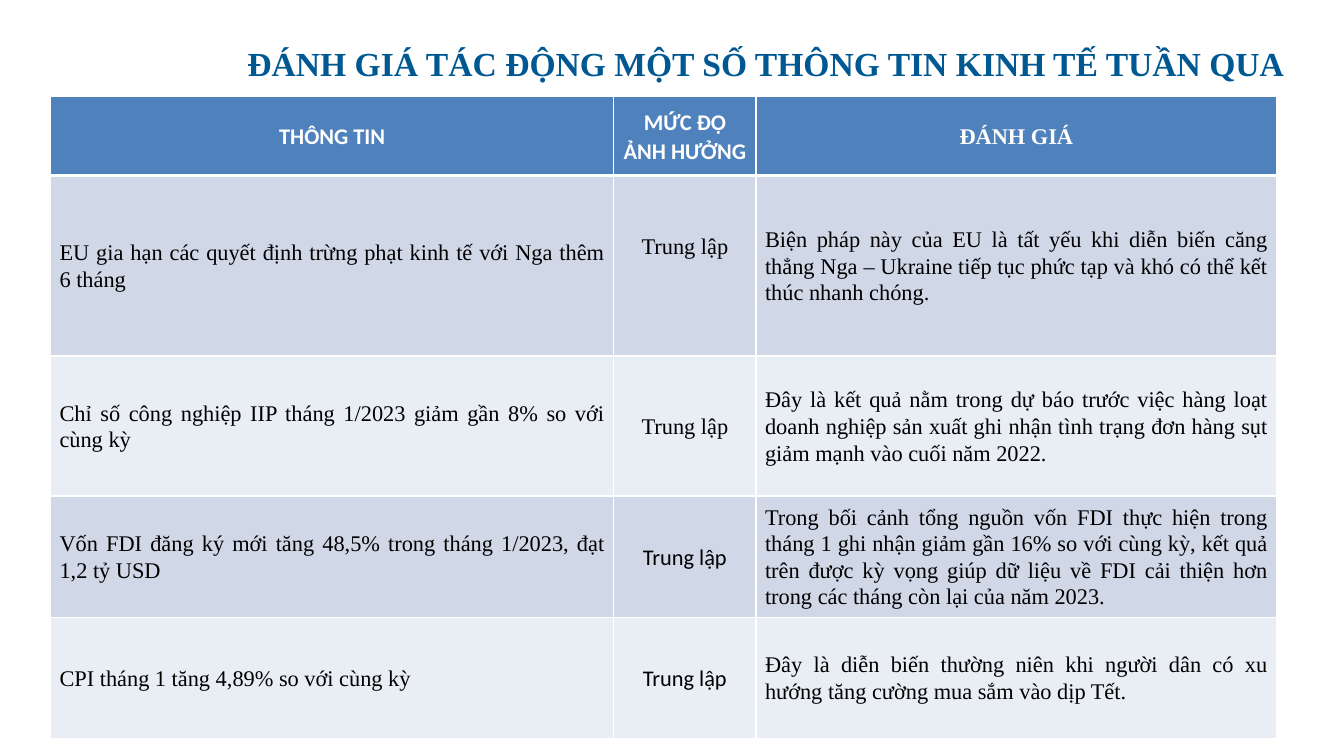
from dataclasses import dataclass

from lxml.etree import SubElement
from pptx import Presentation
from pptx.dml.color import RGBColor
from pptx.enum.text import MSO_ANCHOR, PP_ALIGN
from pptx.oxml.ns import qn
from pptx.util import Cm, Pt


@dataclass(frozen=True)
class Theme:
    serif: str = "Times New Roman"
    sans: str = "Calibri"
    title: str = "005892"
    header: str = "4F81BD"
    bands: tuple[str, str] = ("D0D8E8", "E9EDF4")
    white: str = "FFFFFF"
    black: str = "000000"
    title_size: int = 24
    table_size: int = 16
    thin: int = 1
    thick: int = 3


@dataclass(frozen=True)
class NewsRow:
    height: float
    news: str
    impact: str
    review: str
    impact_font: str
    impact_bottom: float = 0.1


THEME = Theme()
COLUMN_WIDTHS = (14.2, 3.58, 13.13)
HEADER_HEIGHT = 1.98
HEADINGS = (
    ("THÔNG TIN", THEME.sans),
    ("MỨC ĐỘ ẢNH HƯỞNG", THEME.sans),
    ("ĐÁNH GIÁ", THEME.serif),
)
NEWS_ROWS = (
    NewsRow(
        4.55,
        "EU gia hạn các quyết định trừng phạt kinh tế với Nga thêm 6 tháng",
        "Trung lập",
        "Biện pháp này của EU là tất yếu khi diễn biến căng thẳng Nga – Ukraine "
        "tiếp tục phức tạp và khó có thể kết thúc nhanh chóng.",
        THEME.serif,
        impact_bottom=1.07,
    ),
    NewsRow(
        3.53,
        "Chỉ số công nghiệp IIP tháng 1/2023 giảm gần 8% so với cùng kỳ",
        "Trung lập",
        "Đây là kết quả nằm trong dự báo trước việc hàng loạt doanh nghiệp sản xuất "
        "ghi nhận tình trạng đơn hàng sụt giảm mạnh vào cuối năm 2022.",
        THEME.serif,
    ),
    NewsRow(
        3.05,
        "Vốn FDI đăng ký mới tăng 48,5% trong tháng 1/2023, đạt 1,2 tỷ USD",
        "Trung lập",
        "Trong bối cảnh tổng nguồn vốn FDI thực hiện trong tháng 1 ghi nhận giảm gần 16% "
        "so với cùng kỳ, kết quả trên được kỳ vọng giúp dữ liệu về FDI cải thiện hơn "
        "trong các tháng còn lại của năm 2023.",
        THEME.sans,
    ),
    NewsRow(
        3.05,
        "CPI tháng 1 tăng 4,89% so với cùng kỳ",
        "Trung lập",
        "Đây là diễn biến thường niên khi người dân có xu hướng tăng cường mua sắm vào dịp Tết.",
        THEME.sans,
    ),
)


def write_text(frame, text: str, *, font: str, size: int, color: str, bold: bool = False,
               align=PP_ALIGN.CENTER, line_spacing: float = 1.0, space_after: int = 0) -> None:
    para = frame.paragraphs[0]
    para.alignment = align
    para.line_spacing = line_spacing
    para.space_before = Pt(0)
    para.space_after = Pt(space_after)
    span = para.add_run()
    span.text = text
    span.font.name = font
    span.font.size = Pt(size)
    span.font.bold = bold
    span.font.color.rgb = RGBColor.from_string(color)


def set_borders(cell, *, top: int, bottom: int) -> None:
    properties = cell._tc.get_or_add_tcPr()
    widths = {"a:lnL": THEME.thin, "a:lnR": THEME.thin, "a:lnT": top, "a:lnB": bottom}
    for position, (side, width) in enumerate(widths.items()):
        line = SubElement(properties, qn(side), w=str(Pt(width)))
        fill = SubElement(line, qn("a:solidFill"))
        SubElement(fill, qn("a:srgbClr"), val=THEME.white)
        properties.insert(position, line)


def fill_cell(cell, text: str, *, fill: str, font: str, color: str = THEME.black,
              bold: bool = False, align=PP_ALIGN.CENTER, margin_bottom: float = 0.1,
              top: int = THEME.thin, bottom: int = THEME.thin) -> None:
    cell.fill.solid()
    cell.fill.fore_color.rgb = RGBColor.from_string(fill)
    cell.vertical_anchor = MSO_ANCHOR.MIDDLE
    cell.margin_left = cell.margin_right = Cm(0.23)
    cell.margin_top = Cm(0.1)
    cell.margin_bottom = Cm(margin_bottom)
    write_text(cell.text_frame, text, font=font, size=THEME.table_size, color=color,
               bold=bold, align=align, line_spacing=1.07, space_after=8)
    set_borders(cell, top=top, bottom=bottom)


def add_title(page) -> None:
    box = page.shapes.title
    box.left, box.top, box.width, box.height = Cm(6.15), Cm(1.07), Cm(26.47), Cm(1.02)
    frame = box.text_frame
    frame.margin_left = frame.margin_right = frame.margin_top = frame.margin_bottom = 0
    frame.vertical_anchor = MSO_ANCHOR.TOP
    frame.word_wrap = True
    write_text(frame, "ĐÁNH GIÁ TÁC ĐỘNG MỘT SỐ THÔNG TIN KINH TẾ TUẦN QUA ",
               font=THEME.serif, size=THEME.title_size, color=THEME.title, bold=True)


def add_news_table(page) -> None:
    heights = (HEADER_HEIGHT, *(row.height for row in NEWS_ROWS))
    table = page.shapes.add_table(
        len(heights), len(COLUMN_WIDTHS), Cm(1.27), Cm(2.44),
        Cm(sum(COLUMN_WIDTHS)), Cm(sum(heights))).table
    for column, width in zip(table.columns, COLUMN_WIDTHS):
        column.width = Cm(width)
    for table_row, height in zip(table.rows, heights):
        table_row.height = Cm(height)

    for index, (heading, font) in enumerate(HEADINGS):
        fill_cell(table.cell(0, index), heading, fill=THEME.header, font=font,
                  color=THEME.white, bold=True, bottom=THEME.thick)

    for index, row in enumerate(NEWS_ROWS, start=1):
        fill = THEME.bands[(index - 1) % 2]
        top = THEME.thick if index == 1 else THEME.thin
        for column, text in ((0, row.news), (2, row.review)):
            fill_cell(table.cell(index, column), text, fill=fill, font=THEME.serif,
                      align=PP_ALIGN.JUSTIFY, top=top)
        fill_cell(table.cell(index, 1), row.impact, fill=fill, font=row.impact_font,
                  margin_bottom=row.impact_bottom, top=top)


def main() -> None:
    deck = Presentation()
    deck.slide_width, deck.slide_height = Cm(33.87), Cm(19.05)
    page = deck.slides.add_slide(deck.slide_layouts.get_by_name("Title Only"))
    add_title(page)
    add_news_table(page)
    deck.save("out.pptx")


if __name__ == "__main__":
    main()
